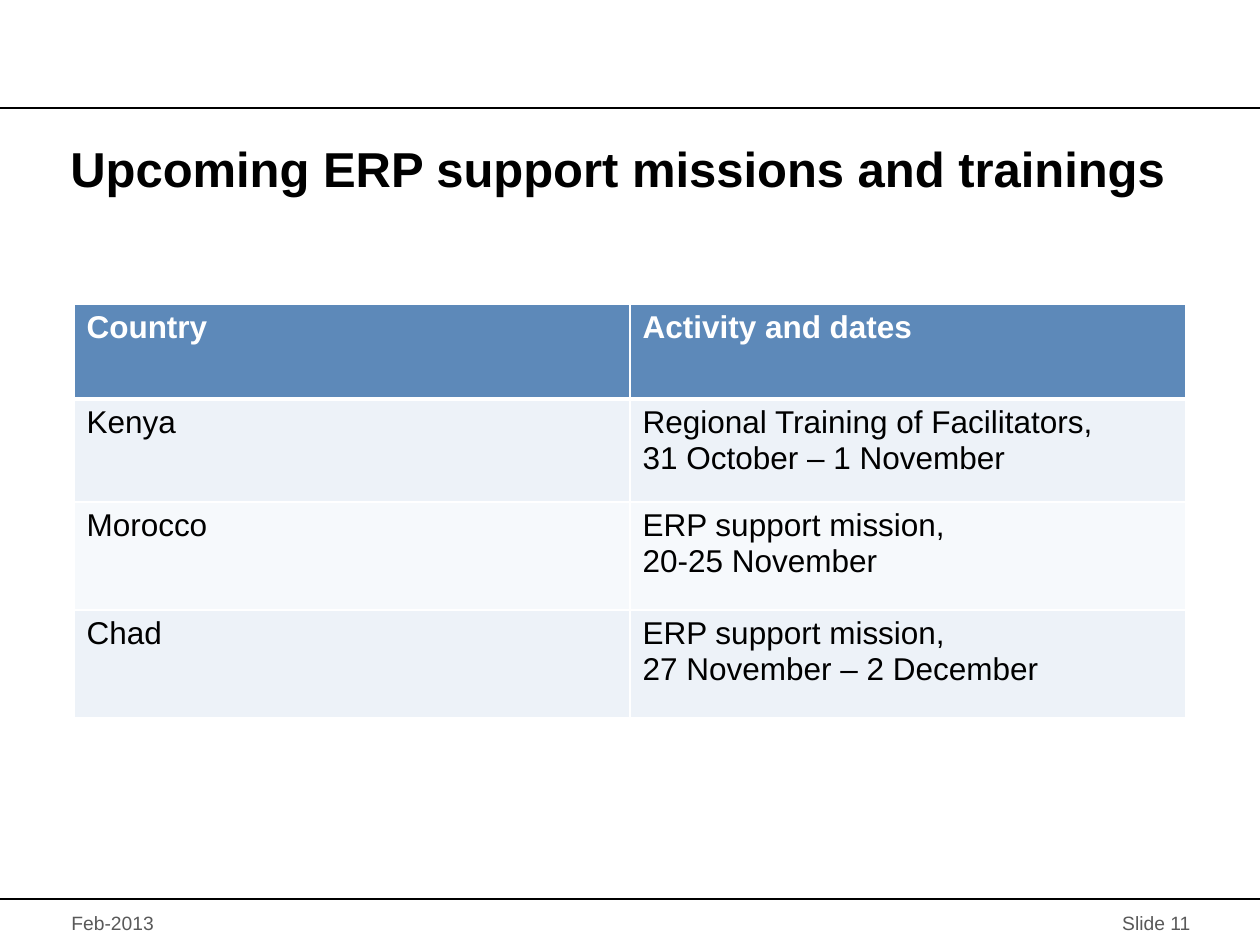
from dataclasses import dataclass
from lxml.etree import SubElement
from pptx import Presentation
from pptx.dml.color import RGBColor
from pptx.enum.shapes import MSO_CONNECTOR
from pptx.enum.text import MSO_ANCHOR, PP_ALIGN
from pptx.oxml.ns import qn
from pptx.util import Pt

SCALE = 914400 / 126
WIDE, HIGH = 1260, 945


def px(count):
    return round(count * SCALE)


@dataclass(frozen=True)
class Theme:
    font: str = "Arial"
    black: str = "000000"
    white: str = "FFFFFF"
    gray: str = "595959"
    head: str = "5D89B9"
    bands: tuple = ("EDF2F8", "F6F9FC")
    title: int = 28
    body: int = 18
    foot: int = 11


class Deck:
    """Draws text, rules and tables on a slide in one theme."""

    def __init__(self, theme):
        self.theme = theme
        self.file = Presentation()
        self.file.slide_width, self.file.slide_height = px(WIDE), px(HIGH)
        self.slide = self.file.slides.add_slide(self.file.slide_layouts[6])

    def fill_text(self, frame, text, size, color, bold=False, align=PP_ALIGN.LEFT):
        frame.text = text
        for para in frame.paragraphs:
            para.alignment = align
            font = para.font
            font.name, font.size, font.bold = self.theme.font, Pt(size), bold
            font.color.rgb = RGBColor.from_string(color)

    def text(self, box, text, size, color, anchor=MSO_ANCHOR.MIDDLE, **style):
        frame = self.slide.shapes.add_textbox(*map(px, box)).text_frame
        frame.word_wrap = True
        frame.vertical_anchor = anchor
        self.fill_text(frame, text, size, color, **style)

    def rule(self, top):
        line = self.slide.shapes.add_connector(
            MSO_CONNECTOR.STRAIGHT, 0, px(top), px(WIDE), px(top))
        line.line.width = Pt(0.75)
        line.line.color.rgb = RGBColor.from_string(self.theme.black)
        SubElement(line._element.spPr, qn("a:effectLst"))

    def edge(self, cell, side, width):
        props = cell._tc.get_or_add_tcPr()
        line = SubElement(props, qn(f"a:ln{side}"), w=str(Pt(width)))
        fill = SubElement(line, qn("a:solidFill"))
        SubElement(fill, qn("a:srgbClr"), val=self.theme.white)

    def table(self, left, top, width, highs, rows):
        look = self.theme
        count = len(rows[0])
        grid = self.slide.shapes.add_table(
            len(rows), count, px(left), px(top), px(width), px(sum(highs))).table
        for col in grid.columns:
            col.width = px(width // count)
        for row, (high, texts) in enumerate(zip(highs, rows)):
            grid.rows[row].height = px(high)
            is_head = row == 0
            fill = look.head if is_head else look.bands[(row - 1) % 2]
            color = look.white if is_head else look.black
            widths = {"L": 1, "R": 1, "T": 3 if row == 1 else 1, "B": 3 if is_head else 1}
            for col, text in enumerate(texts):
                cell = grid.cell(row, col)
                for side, weight in widths.items():
                    self.edge(cell, side, weight)
                cell.fill.solid()
                cell.fill.fore_color.rgb = RGBColor.from_string(fill)
                self.fill_text(cell.text_frame, text, look.body, color, bold=is_head)


def main():
    look = Theme()
    deck = Deck(look)
    for top in (108, 899):
        deck.rule(top)
    deck.text((58, 132, 1134, 72), "Upcoming ERP support missions and trainings",
              look.title, look.black, anchor=MSO_ANCHOR.TOP, bold=True)
    deck.text((888, 900, 315, 45), "Slide 11", look.foot, look.gray,
              align=PP_ALIGN.RIGHT)
    deck.text((59, 905, 179, 36), "Feb-2013", look.foot, look.gray)
    deck.table(74, 304, 1112, (95, 103, 108, 108), (
        ("Country", "Activity and dates"),
        ("Kenya", "Regional Training of Facilitators,\v31 October – 1 November"),
        ("Morocco", "ERP support mission,\n20-25 November"),
        ("Chad", "ERP support mission,\v27 November – 2 December"),
    ))
    deck.file.save("out.pptx")


if __name__ == "__main__":
    main()
